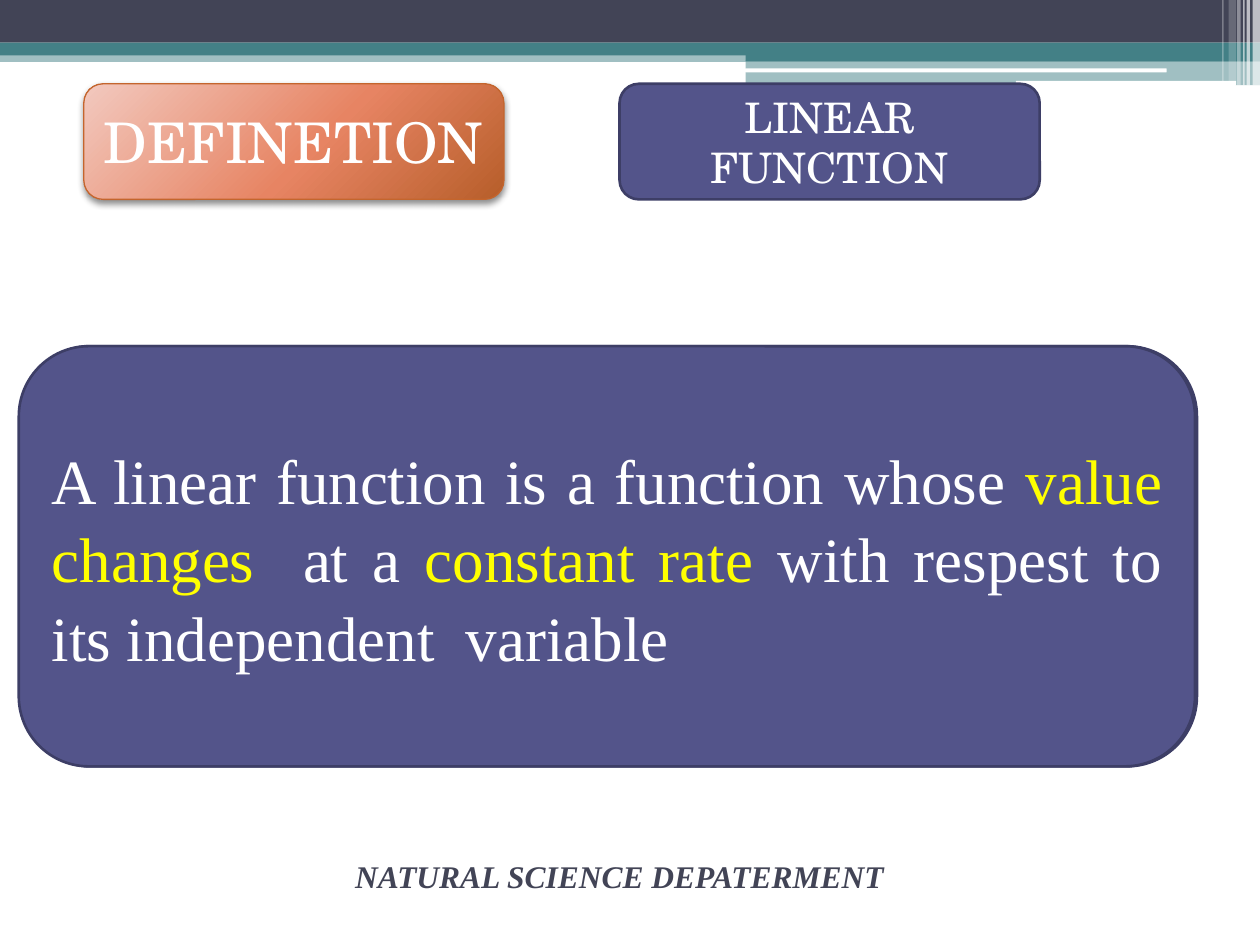
"""Build the linear function definition slide."""
from dataclasses import dataclass

from lxml import etree
from pptx import Presentation, util as u
from pptx.dml.color import RGBColor
from pptx.enum import shapes, text
from pptx.oxml import ns, parse_xml

A = f'xmlns:a="{ns.nsuri("a")}"'
RECT = shapes.MSO_SHAPE.RECTANGLE
ROUND = shapes.MSO_SHAPE.ROUNDED_RECTANGLE
ALIGN = text.PP_ALIGN


@dataclass(frozen=True)
class Theme:
    ink: str = "424456"
    teal: str = "438086"
    white: str = "FFFFFF"
    indigo: str = "53548A"
    edge: str = "3D3E66"
    rust: str = "C4652D"
    accent: str = "FFFF00"
    glow: tuple = ((0, "F2C9BF"), (55, "E78463"), (100, "B75E2A"))
    display: str = "TeX Gyre Schola"
    body: str = "Times New Roman"
    title: int = 32
    topic: int = 24
    statement: int = 36
    footer: int = 18


class Deck:
    def __init__(self, theme):
        self.theme = theme
        self.prs = Presentation()
        self.prs.slide_width, self.prs.slide_height = u.Cm(25.4), u.Cm(19.05)
        self.s = self.prs.slides.add_slide(self.prs.slide_layouts[6])

    def apply(self, target, values):
        for name, value in values.items():
            setattr(target, name, value)

    def block(self, box, color, alpha=100, kind=RECT):
        sp = self.s.shapes.add_shape(kind, *map(u.Cm, box))
        sp.shadow.inherit = False
        sp.fill.solid()
        sp.fill.fore_color.rgb = RGBColor.from_string(color)
        sp.line.fill.background()
        if alpha < 100:
            clr = sp.element.spPr.find(".//" + ns.qn("a:srgbClr"))
            etree.SubElement(clr, ns.qn("a:alpha"), val=str(alpha * 1000))
        return sp

    def card(self, box, edge, width):
        sp = self.block(box, self.theme.indigo, kind=ROUND)
        sp.line.color.rgb = RGBColor.from_string(edge)
        sp.line.width = u.Pt(width)
        return sp

    def glow(self, sp):
        stops = "".join(f'<a:gs pos="{pos * 1000}"><a:srgbClr val="{c}"/></a:gs>'
                        for pos, c in self.theme.glow)
        props = sp.element.spPr
        props.replace(props.find(ns.qn("a:solidFill")), parse_xml(
            f'<a:gradFill {A} rotWithShape="1"><a:gsLst>{stops}</a:gsLst><a:path path="circle">'
            '<a:fillToRect l="-40000" t="-90000" r="140000" b="190000"/></a:path></a:gradFill>'))
        props.find(ns.qn("a:effectLst")).append(parse_xml(
            f'<a:outerShdw {A} blurRad="{u.Pt(4)}" dist="{u.Pt(2)}" dir="5400000" rotWithShape="0">'
            '<a:srgbClr val="000000"><a:alpha val="45000"/></a:srgbClr></a:outerShdw>'))

    def caption(self, sp, runs, font, paragraph, anchor=text.MSO_ANCHOR.MIDDLE):
        tf = sp.text_frame
        self.apply(tf, {"word_wrap": True, "vertical_anchor": anchor})
        p = tf.paragraphs[0]
        self.apply(p, paragraph)
        for words, color in runs:
            r = p.add_run()
            r.text = words
            self.apply(r.font, font)
            r.font.color.rgb = RGBColor.from_string(color)

    def label(self, box, runs, font, paragraph):
        sp = self.s.shapes.add_textbox(*map(u.Cm, box))
        self.caption(sp, runs, font, paragraph, text.MSO_ANCHOR.TOP)


def main():
    t = Theme()
    deck = Deck(t)

    for left, top, width, height, color, alpha in (
            (0, 1.02, 25.4, 0.23, t.teal, 50),
            (0, 0, 25.4, 0.86, t.ink, 100),
            (0, 0.86, 25.4, 0.26, t.teal, 100),
            (15.03, 0.98, 10.37, 0.25, t.teal, 100),
            (15.03, 1.22, 10.37, 0.5, t.teal, 50)):
        deck.block((left, top, width, height), color, alpha)
    for bar in ((15.02, 1.38, 8.5, 0.08), (20.48, 1.63, 4.44, 0.1)):
        deck.block(bar, t.white, kind=ROUND)
    for left, width, height, alpha in (
            (25.25, 0.15, 1.73, 65), (25.13, 0.07, 1.73, 65), (25.06, 0.03, 1.73, 60),
            (24.94, 0.07, 1.73, 40), (24.77, 0.15, 1.63, 20), (24.64, 0.03, 1.63, 30)):
        deck.block((left, 0, width, height), t.white, alpha)

    deck.label((3.18, 17.15, 18.62, 1.9), [("NATURAL SCIENCE DEPATERMENT", t.ink)],
               {"name": t.body, "size": u.Pt(t.footer), "bold": True, "italic": True},
               {"alignment": ALIGN.CENTER, "space_before": u.Pt(6)})

    center = {"alignment": ALIGN.CENTER}
    title = deck.card((1.69, 1.69, 8.47, 2.33), t.rust, 0.75)
    deck.glow(title)
    deck.caption(title, [("DEFINETION", t.white)],
                 {"name": t.display, "size": u.Pt(t.title)}, center)
    topic = deck.card((12.49, 1.69, 8.47, 2.33), t.edge, 1.5)
    deck.caption(topic, [("LINEAR FUNCTION", t.white)],
                 {"name": t.display, "size": u.Pt(t.topic)}, center)

    for left in (0.42, 0.38):
        statement = deck.card((left, 6.98, 23.71, 8.47), t.edge, 1.5)
    deck.caption(statement, [
        ("A linear function is a function whose ", t.white),
        ("value changes  ", t.accent),
        ("at a ", t.white),
        ("constant rate ", t.accent),
        ("with respest to its independent  variable", t.white),
    ], {"name": t.body, "size": u.Pt(t.statement)},
        {"alignment": ALIGN.JUSTIFY, "line_spacing": 1.04})

    deck.prs.save("out.pptx")


if __name__ == "__main__":
    main()
